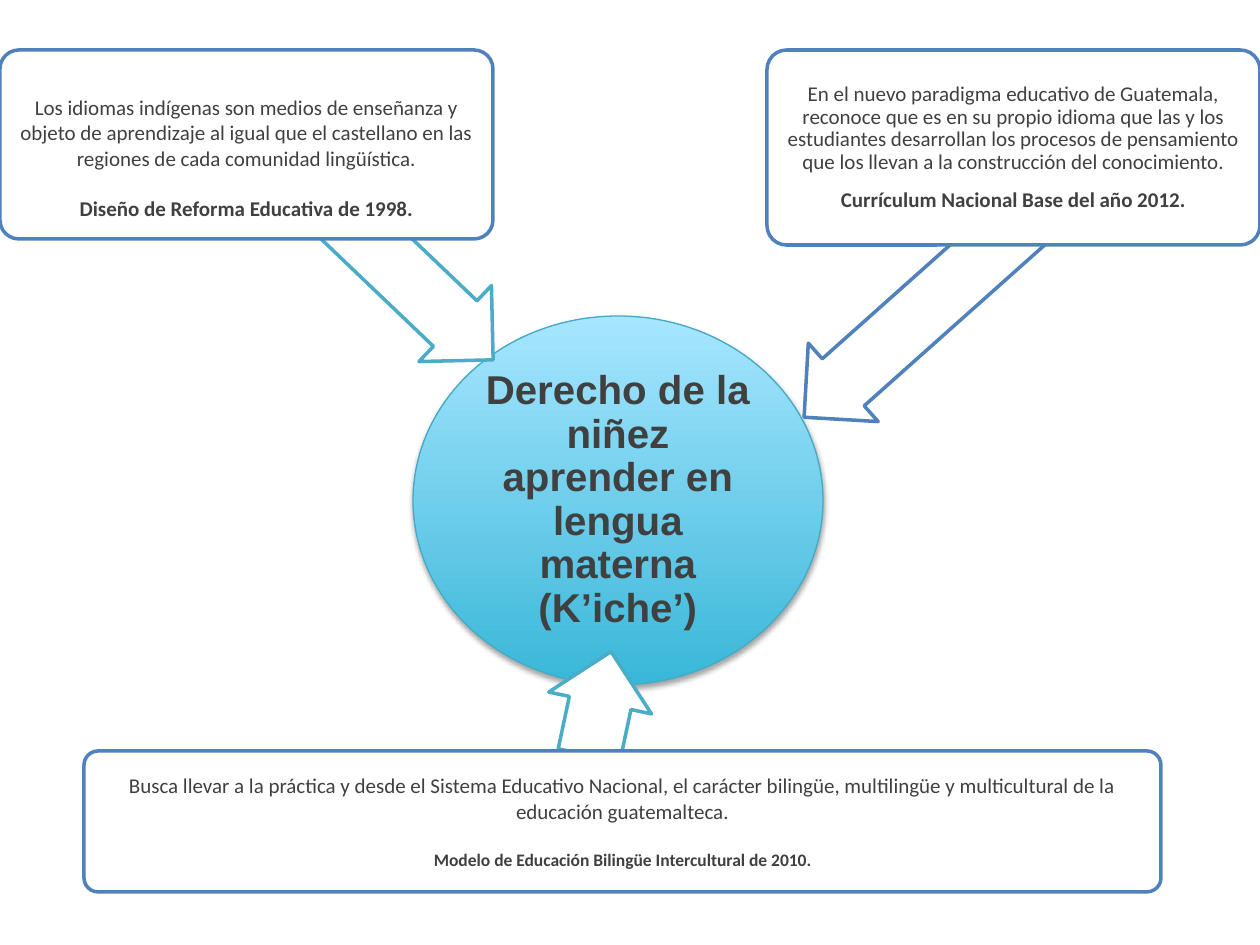
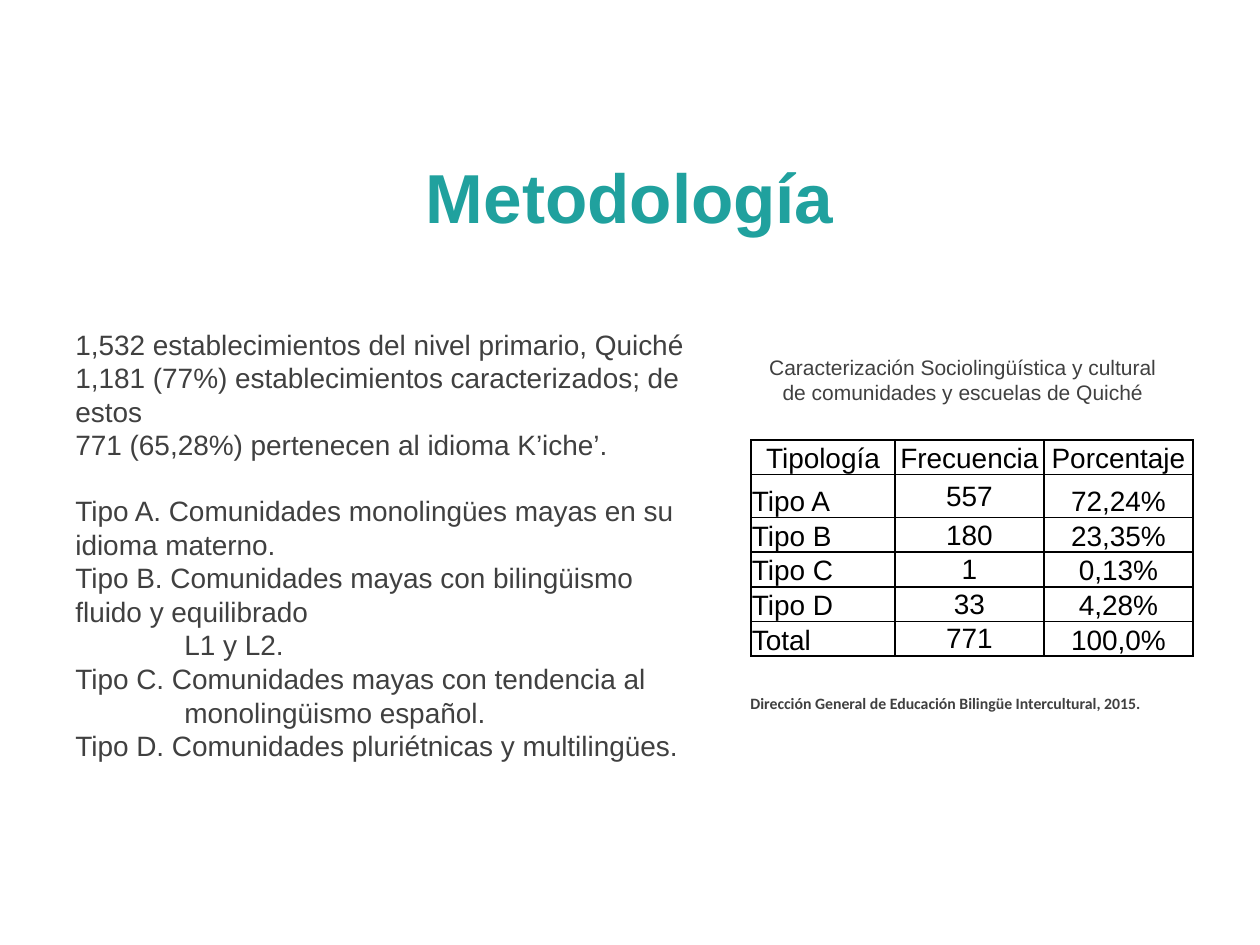
from lxml.etree import SubElement
from pptx import Presentation
from pptx.dml.color import RGBColor
from pptx.enum.shapes import MSO_SHAPE
from pptx.enum.text import MSO_ANCHOR, PP_ALIGN
from pptx.oxml import parse_xml
from pptx.oxml.ns import nsdecls, qn
from pptx.util import Emu, Pt

PX = 914400 / 126
GREY, TEAL, BLACK, WHITE = "404040", "20A19E", "000000", "FFFFFF"
BOX_BLUE, ARROW_AQUA = "4F81BD", "4BACC6"
BLANK_LINE_12, BLANK_LINE_16 = 14.6, 18.4
CENTER, LEFT = PP_ALIGN.CENTER, PP_ALIGN.LEFT


def px(length):
    return Emu(round(length * PX))


def color(hex_value):
    return RGBColor.from_string(hex_value)


def apply_format(target, values):
    for name, value in values.items():
        setattr(target, name, value)


def para(text, size=12, font="Calibri", ink=GREY, bold=False, align=CENTER,
         spacing=1.0, before=0, indent=0):
    """Describe one paragraph."""
    return {
        "text": text,
        "ink": ink,
        "indent": indent,
        "font": {"size": Pt(size), "name": font, "bold": bold},
        "layout": {"alignment": align, "line_spacing": spacing, "space_before": Pt(before)},
    }


def write(frame, paragraphs):
    for index, item in enumerate(paragraphs):
        paragraph = frame.add_paragraph() if index else frame.paragraphs[0]
        apply_format(paragraph, item["layout"])
        if item["indent"]:
            paragraph._p.get_or_add_pPr().set("marL", str(px(item["indent"])))
        run = paragraph.add_run()
        run.text = item["text"]
        apply_format(run.font, item["font"])
        run.font.color.rgb = color(item["ink"])


def set_insets(frame, left, top, right, bottom):
    apply_format(frame, {
        "margin_left": px(left), "margin_top": px(top),
        "margin_right": px(right), "margin_bottom": px(bottom),
    })


def add_text(slide, area, paragraphs, wrap=True, anchor=MSO_ANCHOR.TOP):
    frame = slide.shapes.add_textbox(*map(px, area)).text_frame
    apply_format(frame, {"word_wrap": wrap, "vertical_anchor": anchor})
    write(frame, paragraphs)


def add_outlined(slide, preset, area, line, width, adjustments=()):
    shape = slide.shapes.add_shape(preset, *map(px, area))
    shape.shadow.inherit = False
    for index, value in enumerate(adjustments):
        shape.adjustments[index] = value
    shape.fill.solid()
    shape.fill.fore_color.rgb = color(WHITE)
    shape.line.color.rgb = color(line)
    shape.line.width = Pt(width)
    return shape


def fill_shape_text(shape, paragraphs, top_inset=3):
    frame = shape.text_frame
    apply_format(frame, {"word_wrap": True, "vertical_anchor": MSO_ANCHOR.MIDDLE})
    set_insets(frame, 3, top_inset, 3, 3)
    write(frame, paragraphs)


def add_arrow(slide, area, angle, line):
    arrow = add_outlined(slide, MSO_SHAPE.LEFT_ARROW, area, line, 2, (0.6, 0.5))
    arrow.rotation = angle


def add_quote_box(slide, area, paragraphs, top_inset=3):
    box = add_outlined(slide, MSO_SHAPE.ROUNDED_RECTANGLE, area, BOX_BLUE, 2, (0.1,))
    fill_shape_text(box, paragraphs, top_inset)


def add_core_circle(slide, area, text):
    circle = add_outlined(slide, MSO_SHAPE.OVAL, area, "46AAC5", 0.75)
    circle.fill.gradient()
    circle.fill.gradient_angle = 90
    for stop, shade in zip(circle.fill.gradient_stops, ("39B7D8", "A7E6FF")):
        stop.color.rgb = color(shade)
    # Soft shadow below the circle
    effects = circle._element.spPr.find(qn("a:effectLst"))
    shadow = SubElement(effects, qn("a:outerShdw"), blurRad="40000", dist="23000",
                        dir="5400000", rotWithShape="0")
    shade = SubElement(shadow, qn("a:srgbClr"), val=BLACK)
    SubElement(shade, qn("a:alpha"), val="35000")
    fill_shape_text(circle, [para(text, 23, "Arial", bold=True, spacing=0.9)])


def add_borders(cell):
    properties = cell._tc.get_or_add_tcPr()
    for index, side in enumerate(("lnL", "lnR", "lnT", "lnB")):
        properties.insert(index, parse_xml(
            f'<a:{side} {nsdecls("a")} w="12700"><a:solidFill>'
            f'<a:srgbClr val="{BLACK}"/></a:solidFill></a:{side}>'))


def add_grid(slide, left, top, widths, heights, rows):
    frame = slide.shapes.add_table(len(rows), len(widths), px(left), px(top),
                                   px(sum(widths)), px(sum(heights)))
    table = frame.table
    apply_format(table, {"first_row": False, "horz_banding": False})
    for column, width in zip(table.columns, widths):
        column.width = px(width)
    for row, height in zip(table.rows, heights):
        row.height = px(height)
    for r, values in enumerate(rows):
        for c, value in enumerate(values):
            cell = table.cell(r, c)
            cell.fill.background()
            set_insets(cell, 1, 1, 1, 0)
            cell.vertical_anchor = MSO_ANCHOR.MIDDLE if r and c == 1 else MSO_ANCHOR.BOTTOM
            align = LEFT if r and c == 0 else CENTER
            write(cell.text_frame, [para(value, 16, "Arial", BLACK, align=align)])
            add_borders(cell)


def build_rights_slide(slide):
    add_core_circle(slide, (413, 316, 410, 369),
                    "Derecho de la niñez aprender en lengua materna (K’iche’)")

    # Reform of 1998
    add_arrow(slide, (233, 203, 302, 105), 223.7, ARROW_AQUA)
    add_quote_box(slide, (0, 50, 493, 189), [
        para("Los idiomas indígenas son medios de enseñanza y objeto de aprendizaje al igual "
             "que el castellano en las regiones de cada comunidad lingüística."),
        para("Diseño de Reforma Educativa de 1998.", bold=True, before=BLANK_LINE_12),
    ], top_inset=30)

    # Bilingual model of 2010
    add_arrow(slide, (547, 651, 106, 105), 102, ARROW_AQUA)
    add_quote_box(slide, (84, 751, 1077, 141), [
        para("Busca llevar a la práctica y desde el Sistema Educativo Nacional, el carácter "
             "bilingüe, multilingüe y multicultural de la educación guatemalteca."),
        para("Modelo de Educación Bilingüe Intercultural de 2010.", 10, bold=True,
             before=BLANK_LINE_12),
    ])

    # National curriculum of 2012
    add_arrow(slide, (760, 249, 348, 105), 318.3, BOX_BLUE)
    add_quote_box(slide, (767, 50, 493, 195), [
        para("En el nuevo paradigma educativo de Guatemala, reconoce que es en su propio "
             "idioma que las y los estudiantes desarrollan los procesos de pensamiento que "
             "los llevan a la construcción del conocimiento.", spacing=0.9),
        para("Currículum Nacional Base del año 2012.", bold=True, spacing=0.9, before=8.6),
    ])


def build_method_slide(slide):
    add_text(slide, (63, 117, 1134, 158),
             [para("Metodología", 39.6, "Arial", TEAL, bold=True)],
             anchor=MSO_ANCHOR.MIDDLE)

    # Frequency table
    add_grid(slide, 751, 440, (144, 149, 149), (33, 43, 33, 33, 33, 33), [
        ("Tipología", "Frecuencia", "Porcentaje"),
        ("Tipo A", "557", "72,24%"),
        ("Tipo B", "180", "23,35%"),
        ("Tipo C", "1", "0,13%"),
        ("Tipo D", "33", "4,28%"),
        ("Total", "771", "100,0%"),
    ])
    add_text(slide, (755, 348, 416, 63), [
        para("Caracterización Sociolingüística y cultural", font="Arial"),
        para("de comunidades y escuelas de Quiché", font="Arial"),
    ], wrap=False)

    # Schools and community types: text, space before, indent
    findings = [
        ("1,532 establecimientos del nivel primario, Quiché", 0, 0),
        ("1,181 (77%) establecimientos caracterizados; de estos", 0, 0),
        ("771 (65,28%) pertenecen al idioma K’iche’.", 0, 0),
        ("Tipo A. Comunidades monolingües mayas en su idioma materno.", BLANK_LINE_16, 0),
        ("Tipo B. Comunidades mayas con bilingüismo fluido y equilibrado", 0, 0),
        ("L1 y L2.", 0, 109),
        ("Tipo C. Comunidades mayas con tendencia al", 0, 0),
        ("monolingüismo español.", 0, 109),
        ("Tipo D. Comunidades pluriétnicas y multilingües.", 0, 0),
    ]
    add_text(slide, (63, 321, 644, 454), [
        para(text, 16, "Arial", align=LEFT, before=before, indent=indent)
        for text, before, indent in findings
    ])
    add_text(slide, (738, 688, 422, 32), [
        para("Dirección General de Educación Bilingüe Intercultural, 2015.", 9,
             bold=True, align=LEFT),
    ], wrap=False)


def main():
    deck = Presentation()
    apply_format(deck, {"slide_width": px(1260), "slide_height": px(945)})
    for build in (build_rights_slide, build_method_slide):
        build(deck.slides.add_slide(deck.slide_layouts[6]))
    deck.save("out.pptx")


if __name__ == "__main__":
    main()
